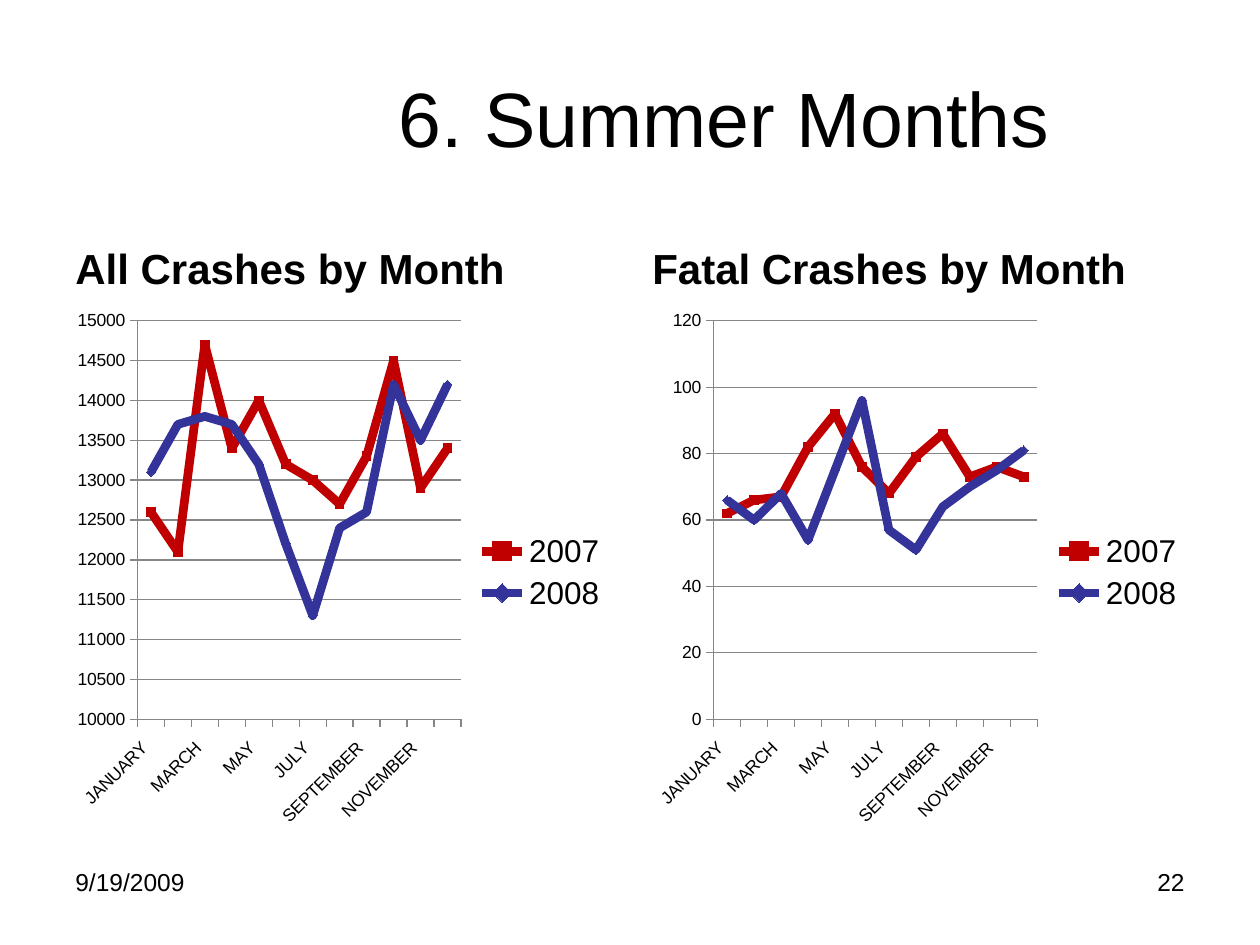
from pptx import Presentation
from pptx.chart.data import CategoryChartData
from pptx.dml.color import RGBColor
from pptx.enum.chart import XL_CHART_TYPE, XL_LEGEND_POSITION, XL_MARKER_STYLE, XL_TICK_MARK
from pptx.enum.text import MSO_ANCHOR, PP_ALIGN
from pptx.util import Cm, Pt


def color(value):
    return RGBColor.from_string(value)


def add_text(page, text, left, top, width, height, size, align=PP_ALIGN.LEFT,
             anchor=MSO_ANCHOR.TOP, bold=False):
    box = page.shapes.add_textbox(Cm(left), Cm(top), Cm(width), Cm(height))
    frame = box.text_frame
    frame.word_wrap = True
    frame.vertical_anchor = anchor
    frame.text = text
    para = frame.paragraphs[0]
    para.alignment = align
    span = para.runs[0]
    span.font.name = "Arial"
    span.font.size = Pt(size)
    span.font.bold = bold
    span.font.color.rgb = color("000000")


deck = Presentation()
deck.slide_width = Cm(25.4)
deck.slide_height = Cm(19.05)
page = deck.slides.add_slide(deck.slide_layouts[6])

add_text(page, "6. Summer Months", 5.08, 0.76, 19.05, 3.18, 44,
         PP_ALIGN.CENTER, MSO_ANCHOR.MIDDLE)

months = ["JANUARY", "FEBRUARY", "MARCH", "APRIL", "MAY", "JUNE", "JULY",
          "AUGUST", "SEPTEMBER", "OCTOBER", "NOVEMBER", "DECEMBER"]
series_styles = [
    ("C00000", XL_MARKER_STYLE.SQUARE),
    ("333399", XL_MARKER_STYLE.DIAMOND),
]
panels = [
    ("All Crashes by Month", 1.27, 10000, {
        "2007": [12600, 12100, 14700, 13400, 14000, 13200, 13000, 12700, 13300, 14500, 12900, 13400],
        "2008": [13100, 13700, 13800, 13700, 13200, 12200, 11300, 12400, 12600, 14200, 13500, 14200],
    }),
    ("Fatal Crashes by Month", 12.9, 0, {
        "2007": [62, 66, 67, 82, 92, 76, 68, 79, 86, 73, 76, 73],
        "2008": [66, 60, 68, 54, 75, 96, 57, 51, 64, 70, 75, 81],
    }),
]

for heading, left, minimum, crashes in panels:
    add_text(page, heading, left, 4.25, 11.23, 1.78, 24,
             anchor=MSO_ANCHOR.BOTTOM, bold=True)

    data = CategoryChartData(number_format="General")
    data.categories = [f"  {month}  " for month in months]
    for year, counts in crashes.items():
        data.add_series(year, counts)
    chart = page.shapes.add_chart(XL_CHART_TYPE.LINE_MARKERS, Cm(left), Cm(6.05),
                                  Cm(11.23), Cm(10.97), data).chart
    chart.has_title = False
    chart.font.name = "Arial"
    chart.font.size = Pt(10)
    chart.font.color.rgb = color("000000")
    chart.has_legend = True
    chart.legend.position = XL_LEGEND_POSITION.RIGHT
    chart.legend.include_in_layout = False
    chart.legend.font.name = "Arial"
    chart.legend.font.size = Pt(18)
    chart.legend.font.color.rgb = color("000000")

    for axis in (chart.category_axis, chart.value_axis):
        axis.major_tick_mark = XL_TICK_MARK.OUTSIDE
        axis.format.line.color.rgb = color("868686")
        axis.format.line.width = Pt(0.75)
    chart.value_axis.minimum_scale = minimum
    chart.value_axis.has_major_gridlines = True
    chart.value_axis.major_gridlines.format.line.color.rgb = color("868686")
    chart.value_axis.major_gridlines.format.line.width = Pt(0.75)

    plot = chart.plots[0]
    plot.vary_by_categories = False
    for series, (shade, symbol) in zip(plot.series, series_styles):
        series.smooth = False
        series.format.line.color.rgb = color(shade)
        series.format.line.width = Pt(5)
        series.marker.style = symbol
        series.marker.size = 5
        series.marker.format.fill.solid()
        series.marker.format.fill.fore_color.rgb = color(shade)
        series.marker.format.line.color.rgb = color(shade)

add_text(page, "9/19/2009", 1.27, 17.35, 5.92, 1.32, 14)
add_text(page, "22", 18.21, 17.35, 5.92, 1.32, 14, PP_ALIGN.RIGHT)

deck.save("out.pptx")
